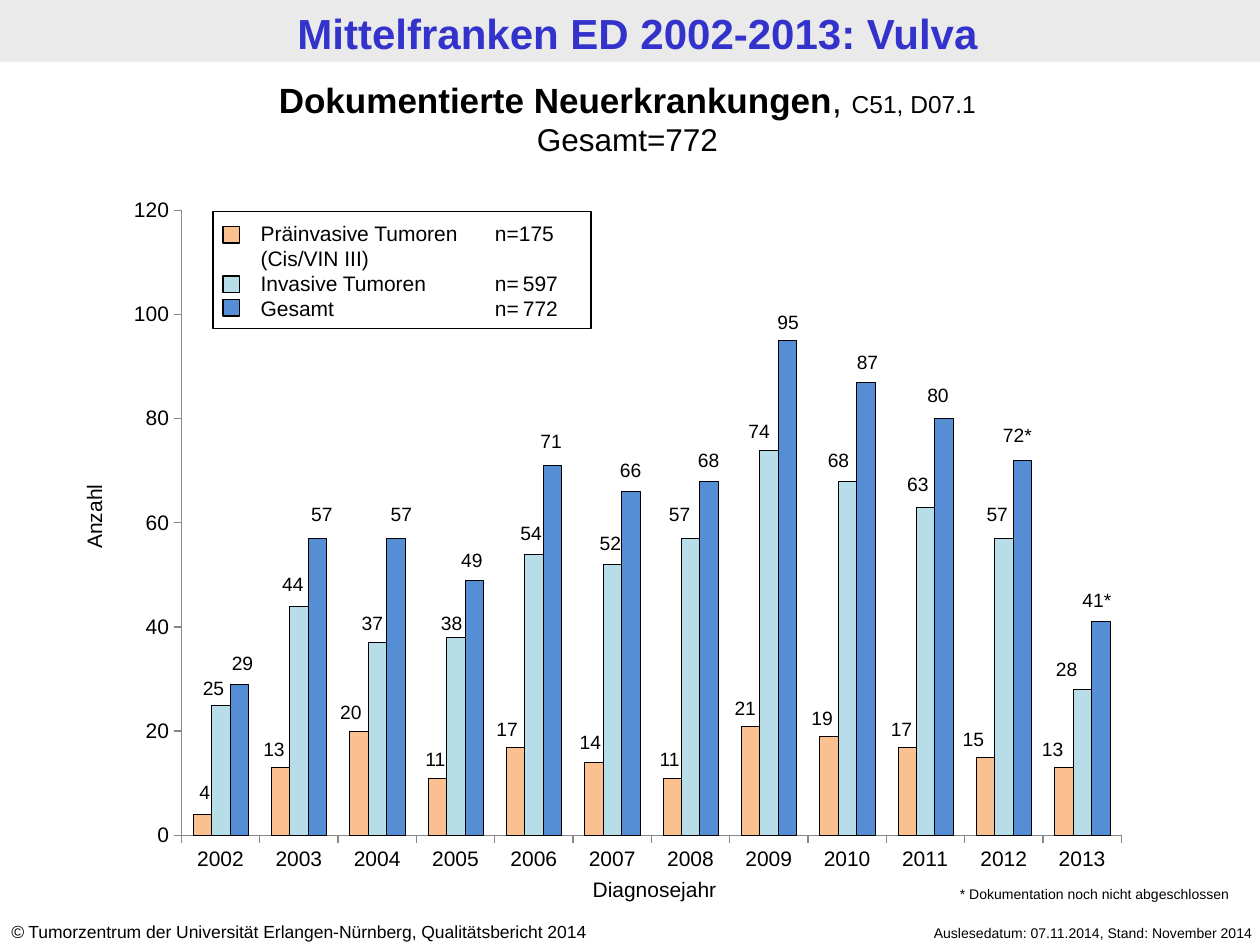
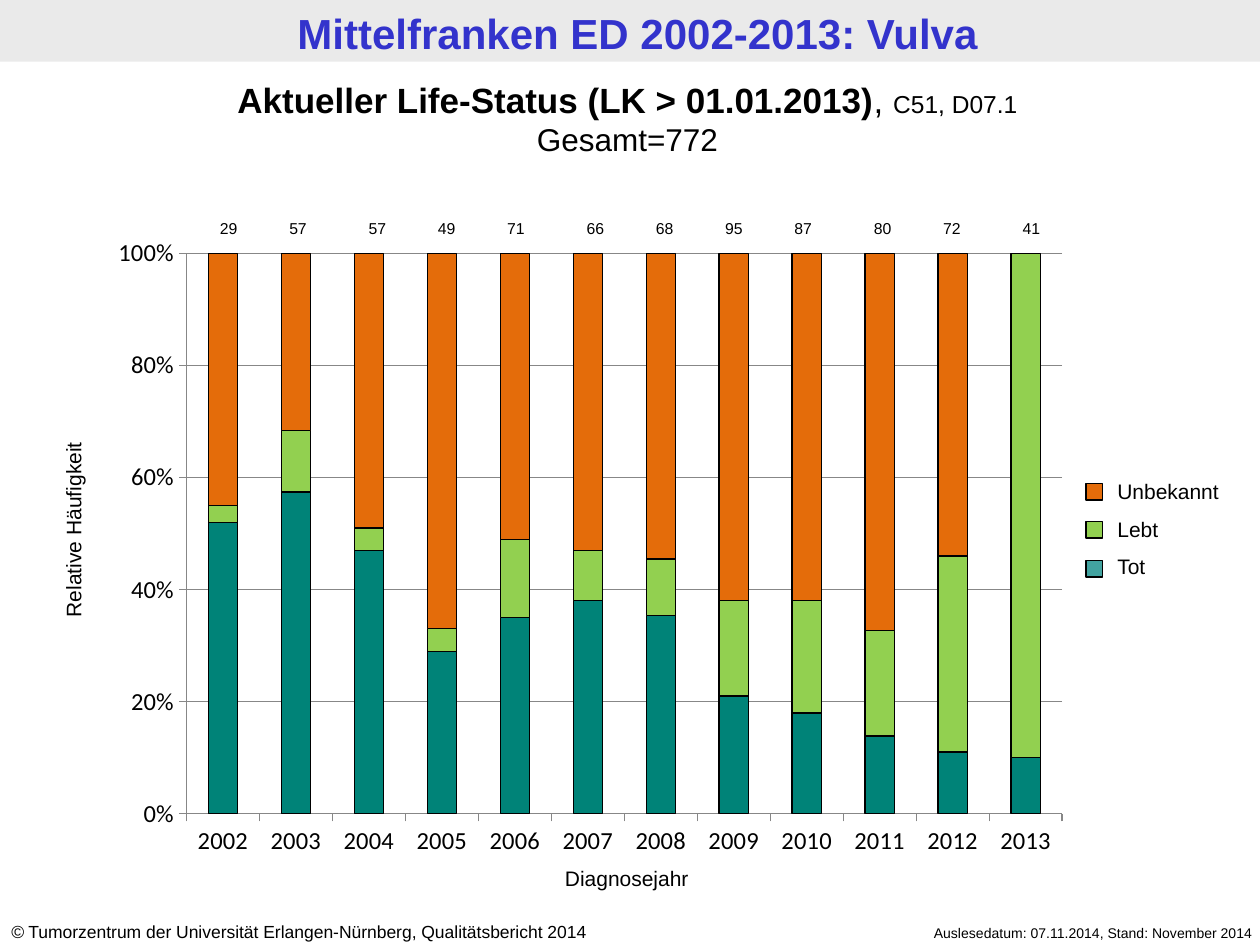
"""Build two slides on vulvar tumours: new cases and life status by year of diagnosis."""
import pptx
import pptx.chart.data
import pptx.dml.color
import pptx.enum.chart
import pptx.enum.shapes
import pptx.enum.text
import pptx.oxml
import pptx.oxml.ns
import pptx.util
from lxml import etree

Inches, Pt = pptx.util.Inches, pptx.util.Pt
RGBColor = pptx.dml.color.RGBColor
CHART_TYPE = pptx.enum.chart.XL_CHART_TYPE
LEFT, CENTER, RIGHT = (getattr(pptx.enum.text.PP_ALIGN, a) for a in ("LEFT", "CENTER", "RIGHT"))
qn = pptx.oxml.ns.qn

BLACK = RGBColor(0x00, 0x00, 0x00)
BAND = RGBColor(0xEA, 0xEA, 0xEA)
TITLE_BLUE = RGBColor(0x33, 0x33, 0xCC)
AXIS_GRAY = RGBColor(0x87, 0x87, 0x87)
PEACH = RGBColor(0xFA, 0xC0, 0x90)
PALE_BLUE = RGBColor(0xB7, 0xDE, 0xE8)
BLUE = RGBColor(0x55, 0x8E, 0xD5)
TEAL = RGBColor(0x00, 0x83, 0x78)
LEGEND_TEAL = RGBColor(0x00, 0x83, 0x80)
GREEN = RGBColor(0x92, 0xD0, 0x50)
ORANGE = RGBColor(0xE4, 0x6C, 0x0A)

YEARS = [str(year) for year in range(2002, 2014)]
TOTALS = [29, 57, 57, 49, 71, 66, 68, 95, 87, 80, 72, 41]

CHARTS = [
    dict(heading="Dokumentierte Neuerkrankungen", kind=CHART_TYPE.COLUMN_CLUSTERED,
         box=(0.91, 1.47, 8.16, 5.55), plot=(1.44, 1.67, 7.46, 4.96),
         font="Arial", size=12, gap=124, overlap=0, line=0.25, step=20, top=120,
         fmt="General", grid=False,
         series=[("Präinvasive Tumoren", PEACH, [4, 13, 20, 11, 17, 14, 11, 21, 19, 17, 15, 13]),
                 ("Invasive Tumoren", PALE_BLUE, [25, 44, 37, 38, 54, 52, 57, 74, 68, 63, 57, 28]),
                 ("Gesamt", BLUE, TOTALS)],
         x_title=(3.66, 6.91, 3.07, 0.3), y_title=(-0.56, 3.95, 2.61, 0.3), y_name="Anzahl"),
    dict(heading="Aktueller Life-Status (LK > 01.01.2013)", kind=CHART_TYPE.COLUMN_STACKED_100,
         box=(0.79, 1.79, 7.8, 5.11), plot=(1.48, 2.01, 6.95, 4.45),
         font="Calibri", size=14, gap=150, overlap=100, line=0.75, step=0.2, top=None,
         fmt="0%", grid=True,
         series=[("Tot", TEAL, [52, 58, 47, 29, 35, 38, 35, 21, 18, 14, 11, 10]),
                 ("Lebt", GREEN, [3, 11, 4, 4, 14, 9, 10, 17, 20, 19, 35, 90]),
                 ("Unbekannt", ORANGE, [45, 32, 49, 67, 51, 53, 54, 62, 62, 68, 54, 0])],
         x_title=(3.85, 6.82, 2.25, 0.31), y_title=(-0.62, 4.05, 2.41, 0.31),
         y_name="Relative Häufigkeit"),
]


def add_text(s, box, lines, size, align=LEFT, color=BLACK, tabs=(), gap=0):
    """Add a text box with one paragraph per line and return its shape."""
    sp = s.shapes.add_textbox(*map(Inches, box))
    tf = sp.text_frame
    tf.word_wrap = True
    for i, line in enumerate(lines):
        p = tf.add_paragraph() if i else tf.paragraphs[0]
        p.alignment = align
        if i and gap:
            p.space_before = Pt(gap)
        if tabs:
            tab_list = etree.SubElement(p._p.get_or_add_pPr(), qn("a:tabLst"))
            for pos, side in tabs:
                etree.SubElement(tab_list, qn("a:tab"), pos=str(Inches(pos)), algn=side)
        p.font.name, p.font.size, p.font.color.rgb = "Arial", Pt(size), color
        p.add_run().text = line
    return sp


def add_rect(s, box, fill=None, line=None):
    """Add a plain rectangle and return it."""
    sp = s.shapes.add_shape(pptx.enum.shapes.MSO_SHAPE.RECTANGLE, *map(Inches, box))
    sp.shadow.inherit = False
    if fill is None:
        sp.fill.background()
    else:
        sp.fill.solid()
        sp.fill.fore_color.rgb = fill
    if line is None:
        sp.line.fill.background()
    else:
        sp.line.color.rgb, sp.line.width = line, Pt(0.75)
    return sp


prs = pptx.Presentation()
prs.slide_width, prs.slide_height = Inches(10), Inches(7.5)

for c in CHARTS:
    s = prs.slides.add_slide(prs.slide_layouts[6])
    add_rect(s, (0, 0, 10, 0.49), BAND)
    sp = add_text(s, (0.06, 0.01, 10, 0.49), ["Mittelfranken ED 2002-2013: Vulva"], 24, CENTER, TITLE_BLUE)
    sp.text_frame.paragraphs[0].font.bold = True
    add_text(s, (6.65, 7.29, 3.39, 0.24), ["Auslesedatum: 07.11.2014, Stand: November 2014"], 8, RIGHT)
    sp = add_text(s, (-0.01, 7.26, 5.24, 0.27), ["©"], 10)
    p = sp.text_frame.paragraphs[0]
    p.runs[0].font.italic = True
    p.add_run().text = " Tumorzentrum der Universität Erlangen-Nürnberg, Qualitätsbericht 2014"

    sp = add_text(s, (-0.04, 0.57, 10.04, 0.74), [c["heading"], "Gesamt=772"], 20, CENTER)
    p, total = sp.text_frame.paragraphs
    p.runs[0].font.bold = True
    p.add_run().text = ", "
    r = p.add_run()
    r.text, r.font.size = "C51, D07.1", Pt(14)
    total.font.size = Pt(18)

    data = pptx.chart.data.CategoryChartData()
    data.categories = YEARS
    for name, color, values in c["series"]:
        data.add_series(name, values)
    chart = s.shapes.add_chart(c["kind"], *map(Inches, c["box"]), data).chart
    chart.has_legend = chart.has_title = False
    chart.font.name, chart.font.size, chart.font.color.rgb = c["font"], Pt(c["size"]), BLACK
    plot = chart.plots[0]
    plot.gap_width, plot.overlap, plot.vary_by_categories = c["gap"], c["overlap"], False
    for series, (name, color, values) in zip(plot.series, c["series"]):
        series.format.fill.solid()
        series.format.fill.fore_color.rgb = color
        series.format.line.color.rgb, series.format.line.width = BLACK, Pt(c["line"])

    val = chart.value_axis
    val.minimum_scale, val.major_unit = 0, c["step"]
    if c["top"]:
        val.maximum_scale = c["top"]
    val.has_major_gridlines = c["grid"]
    if c["grid"]:
        val.major_gridlines.format.line.color.rgb = AXIS_GRAY
    val.tick_labels.number_format = c["fmt"]
    val.tick_labels.number_format_is_linked = False
    for axis in (chart.category_axis, val):
        axis.major_tick_mark = pptx.enum.chart.XL_TICK_MARK.OUTSIDE
        axis.format.line.color.rgb, axis.format.line.width = AXIS_GRAY, Pt(0.75)
        axis.tick_labels.font.name, axis.tick_labels.font.size = c["font"], Pt(c["size"])

    area = chart._chartSpace.chart.plotArea
    for old in area.findall(qn("c:layout")):
        area.remove(old)
    layout = etree.Element(qn("c:layout"))
    area.insert(0, layout)
    manual = etree.SubElement(layout, qn("c:manualLayout"))
    left, top, width, height = c["box"]
    x, y, w, h = c["plot"]
    for tag, value in (("layoutTarget", "inner"), ("xMode", "edge"), ("yMode", "edge"),
                       ("x", (x - left) / width), ("y", (y - top) / height),
                       ("w", w / width), ("h", h / height)):
        etree.SubElement(manual, qn("c:" + tag), val=str(value))

    add_text(s, c["x_title"], ["Diagnosejahr"], 12, CENTER)
    add_text(s, c["y_title"], [c["y_name"]], 12, CENTER).rotation = 270

cases, life = prs.slides

add_rect(cases, (1.69, 1.68, 3, 0.93), line=BLACK)
add_text(cases, (1.97, 1.7, 2.73, 0.91),
         ["Präinvasive Tumoren\tn=\t175 (Cis/VIN III)", "Invasive Tumoren \t\tn=\t597", "Gesamt\t\tn=\t772"],
         12, tabs=((1.47, "l"), (1.86, "l"), (2.36, "r"), (4.41, "l")))
for top, color in ((1.8, PEACH), (2.19, PALE_BLUE), (2.38, BLUE)):
    add_rect(cases, (1.77, top, 0.13, 0.13), color, BLACK)

BAR_LABELS = [
    (0.53, [1.36, 1.91, 2.52, 3.19, 3.76, 4.42, 5.05, 5.65, 6.26, 6.89, 7.46, 8.09],
     [6.14, 5.8, 5.51, 5.88, 5.64, 5.75, 5.88, 5.48, 5.56, 5.64, 5.72, 5.8]),
    (0.63, [1.38, 2.01, 2.64, 3.27, 3.9, 4.53, 5.08, 5.71, 6.34, 6.97, 7.6, 8.15],
     [5.32, 4.49, 4.8, 4.8, 4.09, 4.17, 3.94, 3.28, 3.51, 3.7, 3.94, 5.17]),
    (0.63, [1.61, 2.24, 2.87, 3.43, 4.06, 4.69, 5.31, 5.94, 6.57, 7.13, 7.76, 8.39],
     [5.12, 3.94, 3.94, 4.3, 3.36, 3.59, 3.51, 2.41, 2.73, 2.99, 3.31, 4.62]),
]
for (name, color, values), (width, lefts, tops) in zip(CHARTS[0]["series"], BAR_LABELS):
    for year, value, left, top in zip(YEARS, values, lefts, tops):
        mark = "*" if name == "Gesamt" and year in ("2012", "2013") else ""
        add_text(cases, (left, top, width, 0.29), [f"{value}{mark}"], 11, CENTER)
add_text(cases, (7.52, 6.98, 2.7, 0.24), ["* Dokumentation noch nicht abgeschlossen"], 8)

add_text(life, (8.77, 3.75, 1.66, 0.91), ["Unbekannt", "Lebt", "Tot"], 12, gap=7)
for top, color in ((3.84, ORANGE), (4.14, GREEN), (4.45, LEGEND_TEAL)):
    sp = add_rect(life, (8.62, top, 0.13, 0.13), color, BLACK)
    if color == LEGEND_TEAL:
        rgb = sp.fill._xPr.find(qn("a:solidFill")).find(qn("a:srgbClr"))
        etree.SubElement(rgb, qn("a:alpha"), val="74000")

TOTAL_LEFTS = [1.54, 2.09, 2.72, 3.27, 3.82, 4.45, 5, 5.55, 6.1, 6.73, 7.28, 7.91]
for total, left in zip(TOTALS, TOTAL_LEFTS):
    add_text(life, (left, 1.69, 0.55, 0.25), [str(total)], 9, CENTER)

prs.save("out.pptx")
